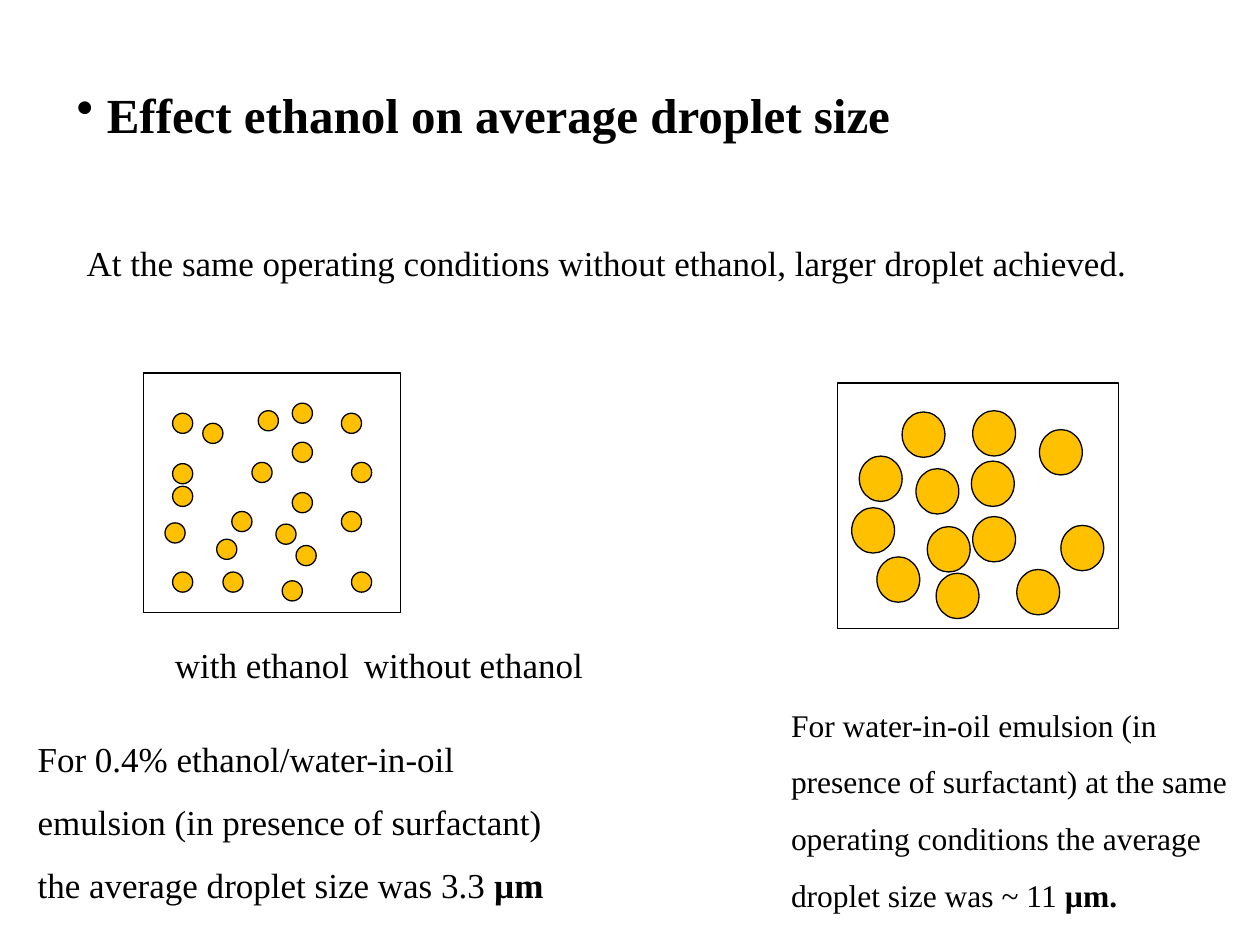
from typing import NamedTuple

from lxml.etree import SubElement
from pptx import Presentation
from pptx.dml.color import RGBColor
from pptx.enum.shapes import MSO_SHAPE
from pptx.enum.text import MSO_ANCHOR, MSO_AUTO_SIZE, PP_ALIGN
from pptx.oxml.ns import qn
from pptx.util import Inches, Pt

COLS, ROWS = 100, 75
CELL = Inches(0.1)
FONT = "Times New Roman"
BLACK, AMBER = "000000", "FFC000"


class Area(NamedTuple):
    col: float
    row: float
    cols: float
    rows: float


class Run(NamedTuple):
    text: str
    bold: bool = False


class Text(NamedTuple):
    area: Area
    runs: list[Run]
    size: int = 20
    spacing: float = 1.5
    after: int = 10
    margin: float = 0
    indent: float = 0
    bullet: str = ""
    tab: float = 0
    align: PP_ALIGN = PP_ALIGN.LEFT
    anchor: MSO_ANCHOR = MSO_ANCHOR.TOP
    fit: MSO_AUTO_SIZE = MSO_AUTO_SIZE.SHAPE_TO_FIT_TEXT


class Emulsion(NamedTuple):
    frame: Area
    drop_cols: float
    drop_rows: float
    drops: list[tuple[float, float]]


TEXTS = [
    Text(Area(5.1, 2.8, 85, 12.5),
         [Run("Effect ethanol on average droplet size", True)],
         size=28, spacing=1, after=0, margin=2.4, indent=-2.4, bullet="•",
         anchor=MSO_ANCHOR.MIDDLE, fit=MSO_AUTO_SIZE.NONE),
    Text(Area(5.9, 17, 85, 45),
         [Run("At the same operating conditions without ethanol, "
              "larger droplet achieved.")],
         margin=3.8, indent=-3.8, align=PP_ALIGN.JUSTIFY,
         fit=MSO_AUTO_SIZE.NONE),
    Text(Area(12.2, 48.9, 83.5, 6.1),
         [Run("with ethanol\twithout ethanol")], margin=0.7, tab=55.5),
    Text(Area(2, 56.4, 45.7, 16),
         [Run("For 0.4% ethanol/water-in-oil emulsion (in presence of "
              "surfactant) the average droplet size was 3.3 "),
          Run("µm", True)]),
    Text(Area(61.8, 54, 40.3, 19.2),
         [Run("For water-in-oil emulsion (in presence of surfactant) at the "
              "same operating conditions the average droplet size was ~ 11"),
          Run(" µm.", True)], size=18),
]

EMULSIONS = [
    Emulsion(Area(66.5, 30.4, 22.3, 19.5), 3.4, 3.6, [
        (68.2, 36.2), (67.6, 40.3), (71.6, 32.7), (69.6, 44.2), (73.6, 41.8),
        (74.3, 45.5), (77.1, 36.6), (77.2, 41), (80.7, 45.2), (77.2, 32.6),
        (72.7, 37.2), (84.2, 41.7), (82.5, 34.1)]),
    Emulsion(Area(11.4, 29.6, 20.4, 19), 1.6, 1.6, [
        (16.1, 33.6), (20.5, 32.6), (17.7, 45.4), (23.2, 35.1), (13.7, 38.6),
        (13.7, 36.8), (18.4, 40.6), (13.7, 32.8), (27.1, 32.8), (27.9, 45.4),
        (20, 36.7), (13.1, 41.5), (17.2, 42.8), (21.9, 41.6), (23.2, 32),
        (27.9, 36.7), (23.2, 39.1), (27.1, 40.6), (13.7, 45.4), (22.4, 46.1),
        (23.5, 43.3)]),
]


def grid(n: float) -> int:
    return round(n * CELL)


def color(value: str) -> RGBColor:
    return RGBColor.from_string(value)


def add_outline(shapes, kind: MSO_SHAPE, area: Area, fill: str = "") -> None:
    sp = shapes.add_shape(kind, *map(grid, area))
    sp.shadow.inherit = False
    if fill:
        sp.fill.solid()
        sp.fill.fore_color.rgb = color(fill)
    else:
        sp.fill.background()
    sp.line.color.rgb = color(BLACK)
    sp.line.width = Pt(0.75)


def add_emulsion(s, e: Emulsion) -> None:
    shapes = s.shapes.add_group_shape().shapes
    for col, row in e.drops:
        area = Area(col, row, e.drop_cols, e.drop_rows)
        add_outline(shapes, MSO_SHAPE.OVAL, area, AMBER)
    add_outline(shapes, MSO_SHAPE.RECTANGLE, e.frame)


def add_text(s, t: Text) -> None:
    tf = s.shapes.add_textbox(*map(grid, t.area)).text_frame
    tf.word_wrap = True
    tf.auto_size = t.fit
    tf.vertical_anchor = t.anchor
    p = tf.paragraphs[0]
    pPr = p._p.get_or_add_pPr()
    pPr.set("marL", str(grid(t.margin)))
    pPr.set("indent", str(grid(t.indent)))
    if t.bullet:
        SubElement(pPr, qn("a:buChar"), char=t.bullet)
    if t.tab:
        tabs = SubElement(pPr, qn("a:tabLst"))
        SubElement(tabs, qn("a:tab"), pos=str(grid(t.tab)), algn="l")
    p.alignment = t.align
    p.line_spacing = t.spacing
    p.space_after = Pt(t.after)
    for run in t.runs:
        r = p.add_run()
        r.text = run.text
        r.font.name = FONT
        r.font.size = Pt(t.size)
        r.font.bold = run.bold
        r.font.color.rgb = color(BLACK)


def main() -> None:
    prs = Presentation()
    prs.slide_width, prs.slide_height = grid(COLS), grid(ROWS)
    s = prs.slides.add_slide(prs.slide_layouts[6])
    title, statement, *captions = TEXTS
    for t in (title, statement):
        add_text(s, t)
    for e in EMULSIONS:
        add_emulsion(s, e)
    for t in captions:
        add_text(s, t)
    prs.save("out.pptx")


if __name__ == "__main__":
    main()
